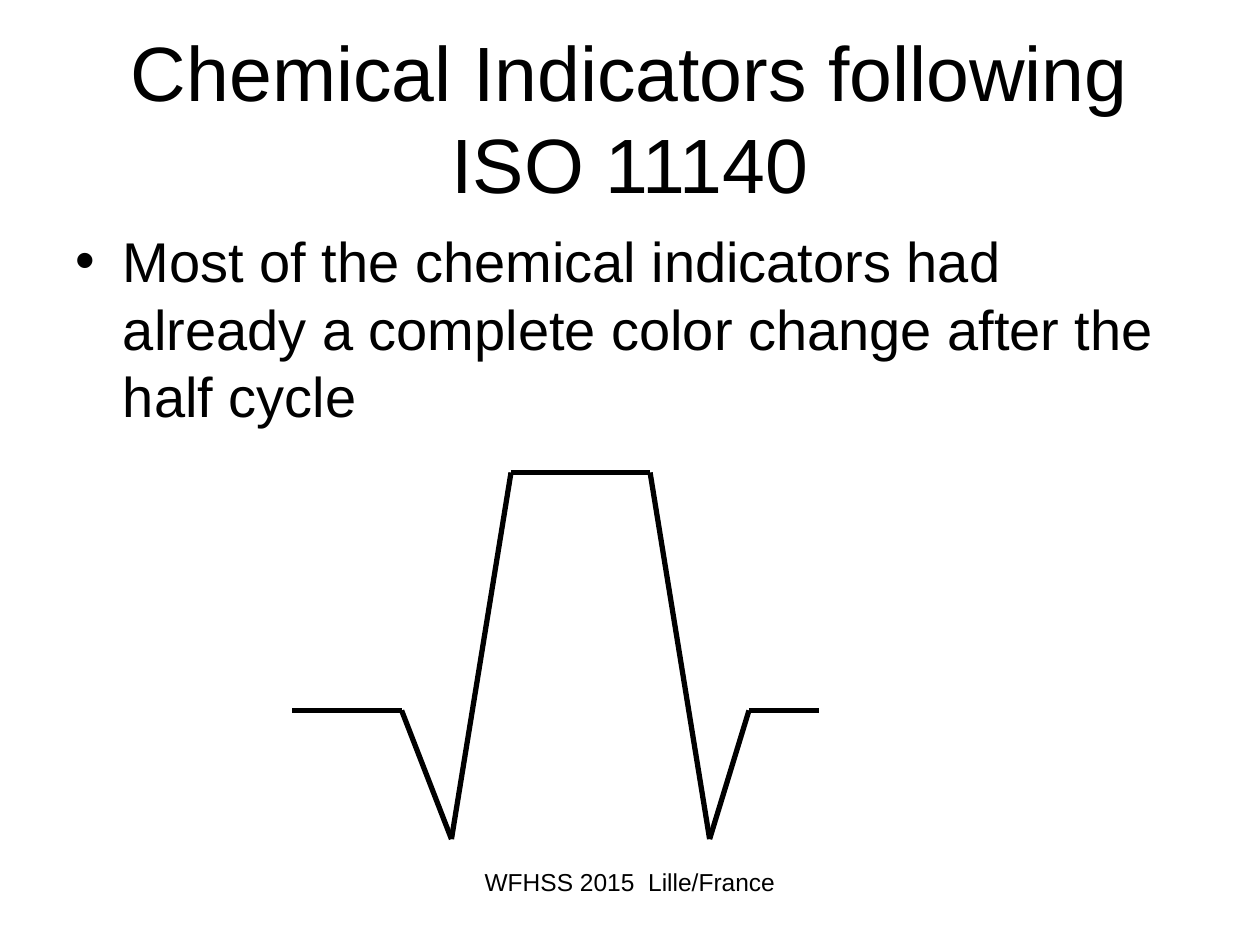
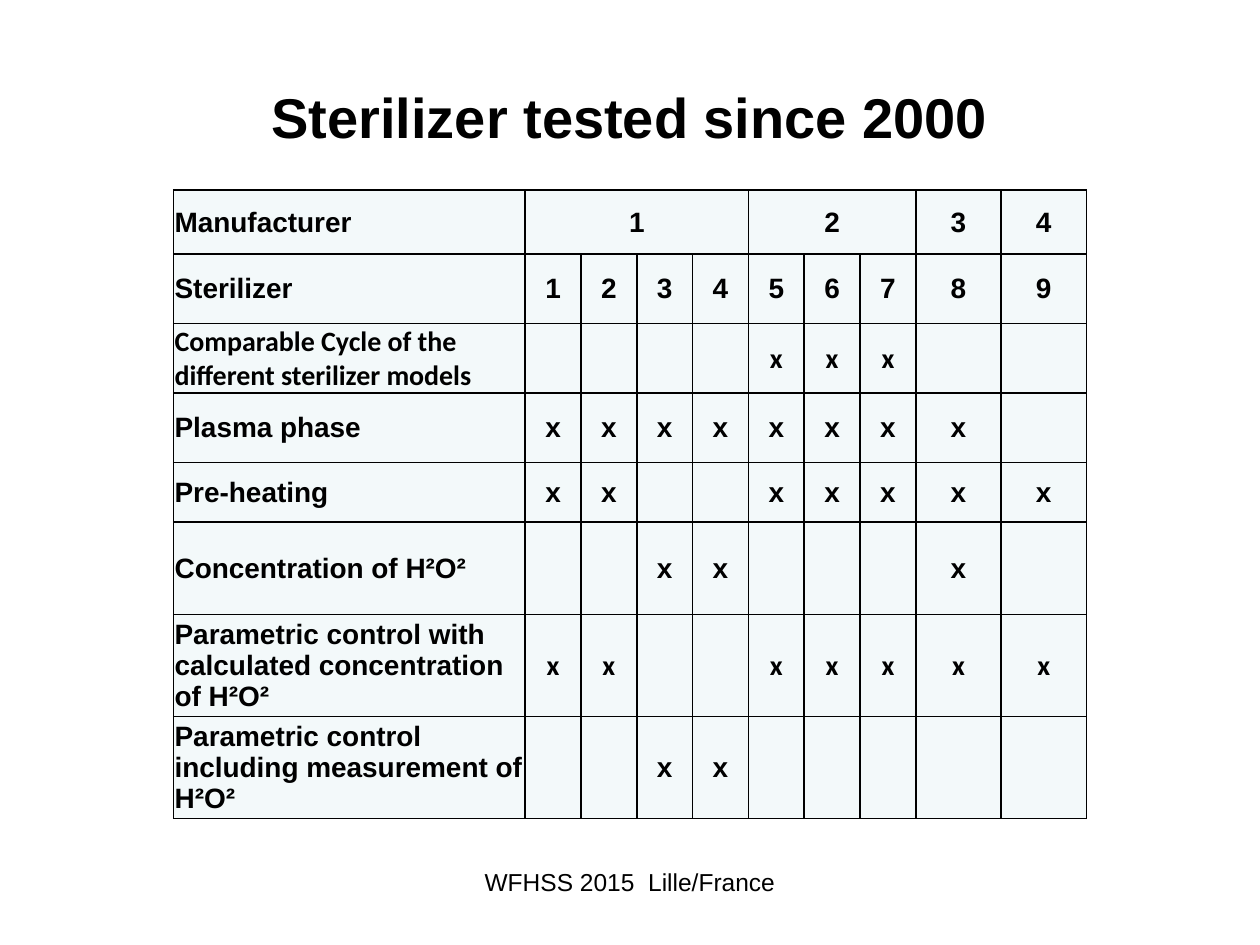
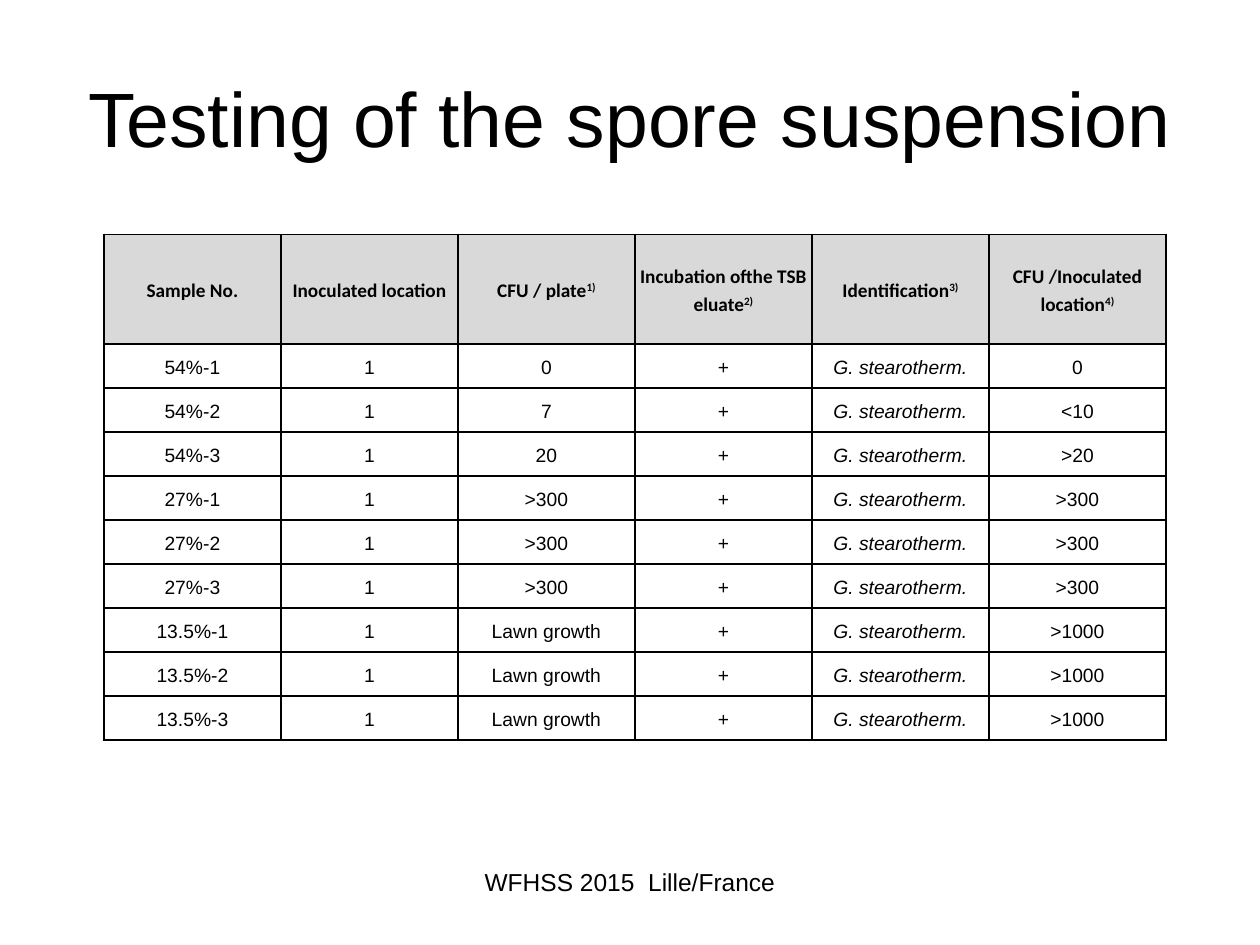
"""Builds three slides on chemical indicators, tested sterilizers and spore suspension testing."""
from itertools import pairwise

from lxml import etree
from pptx import Presentation
from pptx.dml.color import RGBColor
from pptx.enum.shapes import MSO_CONNECTOR
from pptx.enum.text import MSO_ANCHOR, MSO_AUTO_SIZE, PP_ALIGN
from pptx.oxml.ns import qn
from pptx.util import Pt

BLACK = RGBColor(0x00, 0x00, 0x00)
PALE_BLUE = RGBColor(0xF3, 0xF9, 0xFA)
HEADER_GREY = RGBColor(0xD9, 0xD9, 0xD9)
CENTER, LEFT = PP_ALIGN.CENTER, PP_ALIGN.LEFT
MIDDLE = MSO_ANCHOR.MIDDLE
NO_AUTOFIT = MSO_AUTO_SIZE.NONE
STRAIGHT = MSO_CONNECTOR.STRAIGHT
HEADING_FONT, TABLE_FONT = "Arial", "Calibri"
FOOTER = "WFHSS 2015  Lille/France"


def write(frame, text, size, font=HEADING_FONT, bold=False, italic=False,
          align=None, superscript="", line_spacing=None, space_after=None):
    paragraph = frame.paragraphs[0]
    paragraph.alignment = align
    paragraph.line_spacing = line_spacing
    paragraph.space_after = space_after
    for part in filter(None, (text, superscript)):
        run = paragraph.add_run()
        run.text = part
        run.font.size = Pt(size)
        run.font.name = font
        run.font.bold = bold
        run.font.italic = italic
        run.font.color.rgb = BLACK
    if superscript:
        run.font._element.set("baseline", "30000")


def add_grid(slide, left, top, widths, heights, inset, fills):
    grid = slide.shapes.add_table(len(heights), len(widths), Pt(left), Pt(top),
                                  Pt(sum(widths)), Pt(sum(heights))).table
    grid.first_row = grid.horz_banding = False
    for column, width in zip(grid.columns, widths):
        column.width = Pt(width)
    for row, height, fill in zip(grid.rows, heights, fills):
        row.height = Pt(height)
        for cell in row.cells:
            cell.vertical_anchor = MIDDLE
            cell.margin_left = cell.margin_right = cell.margin_top = Pt(inset)
            cell.margin_bottom = 0
            for side in ("a:lnL", "a:lnR", "a:lnT", "a:lnB"):
                border = etree.SubElement(cell._tc.get_or_add_tcPr(), qn(side), w=str(Pt(1)))
                paint = etree.SubElement(border, qn("a:solidFill"))
                etree.SubElement(paint, qn("a:srgbClr"), val=str(BLACK))
            if fill is None:
                cell.fill.background()
            else:
                cell.fill.solid()
                cell.fill.fore_color.rgb = fill
    return grid


deck = Presentation()
deck.slide_width, deck.slide_height = Pt(720), Pt(540)
TITLE_AND_CONTENT, TITLE_ONLY = deck.slide_layouts[1], deck.slide_layouts[5]

slides = []
for layout, heading, size, bold in (
    (TITLE_AND_CONTENT, "Chemical Indicators following ISO 11140", 44, False),
    (TITLE_ONLY, "Sterilizer tested since 2000", 32, True),
    (TITLE_ONLY, "Testing of the spore suspension", 44, False),
):
    slide = deck.slides.add_slide(layout)
    title = slide.shapes.title
    title.left, title.top, title.width, title.height = Pt(36), Pt(21.6), Pt(648), Pt(90)
    title.text_frame.auto_size = NO_AUTOFIT
    title.text_frame.vertical_anchor = MIDDLE
    write(title.text_frame, heading, size, bold=bold, align=CENTER)
    footer = slide.shapes.add_textbox(Pt(246), Pt(492), Pt(228), Pt(37.5))
    footer.text_frame.word_wrap = True
    write(footer.text_frame, FOOTER, 14, align=CENTER)
    slides.append(slide)
indicator_slide, sterilizer_slide, spore_slide = slides

finding = indicator_slide.placeholders[1]
finding.left, finding.top, finding.width, finding.height = Pt(36), Pt(126), Pt(648), Pt(356.4)
finding.text_frame.auto_size = NO_AUTOFIT
write(finding.text_frame, "Most of the chemical indicators had already a complete color change "
      "after the half cycle", 32)

BASELINE, VACUUM, PLATEAU = 406, 479.5, 270
cycle_points = [(167, BASELINE), (229.5, BASELINE), (258, VACUUM), (292, PLATEAU),
                (371.5, PLATEAU), (405.5, VACUUM), (428, BASELINE), (468, BASELINE)]
cycle_curve = indicator_slide.shapes.add_group_shape()
for (x1, y1), (x2, y2) in pairwise(cycle_points):
    segment = cycle_curve.shapes.add_connector(STRAIGHT, Pt(x1), Pt(y1), Pt(x2), Pt(y2))
    segment.line.color.rgb = BLACK
    segment.line.width = Pt(3)
    etree.SubElement(segment._element.spPr, qn("a:effectLst"))

sterilizer_rows = [
    ("Manufacturer", "1   2  34", HEADING_FONT, HEADING_FONT),
    ("Sterilizer", "123456789", HEADING_FONT, HEADING_FONT),
    ("Comparable Cycle of the different sterilizer models", "    xxx  ", TABLE_FONT, TABLE_FONT),
    ("Plasma phase", "xxxxxxxx ", HEADING_FONT, HEADING_FONT),
    ("Pre-heating", "xx  xxxxx", HEADING_FONT, HEADING_FONT),
    ("Concentration of H²O²", "  xx   x ", HEADING_FONT, HEADING_FONT),
    ("Parametric control with calculated concentration of H²O²", "xx  xxxxx",
     HEADING_FONT, TABLE_FONT),
    ("Parametric control including measurement of H²O²", "  xx     ",
     HEADING_FONT, HEADING_FONT),
]
sterilizers = add_grid(sterilizer_slide, 99.2, 108.6, [200.9] + [31.9] * 7 + [48.7] * 2,
                       [36.6, 39.7, 39.7, 39.7, 34, 53, 53.9, 53.9], 0.6,
                       [PALE_BLUE] * len(sterilizer_rows))
for first, last in ((1, 4), (5, 7)):
    sterilizers.cell(0, first).merge(sterilizers.cell(0, last))
for row, (feature, marks, feature_font, mark_font) in enumerate(sterilizer_rows):
    write(sterilizers.cell(row, 0).text_frame, feature, 16, feature_font, bold=True, align=LEFT)
    for column, mark in enumerate(marks, start=1):
        write(sterilizers.cell(row, column).text_frame, mark.strip(), 16, mark_font,
              bold=True, align=CENTER)

spore_headers = [("Sample No.", ""), ("Inoculated location", ""), ("CFU / plate", "1)"),
                 ("Incubation ofthe TSB eluate", "2)"), ("Identification", "3)"),
                 ("CFU /Inoculated location", "4)")]
SPECIES = "G. stearotherm."
spore_counts = [
    ("54%-1", "0", "0"), ("54%-2", "7", "<10"), ("54%-3", "20", ">20"),
    ("27%-1", ">300", ">300"), ("27%-2", ">300", ">300"), ("27%-3", ">300", ">300"),
    ("13.5%-1", "Lawn growth", ">1000"), ("13.5%-2", "Lawn growth", ">1000"),
    ("13.5%-3", "Lawn growth", ">1000"),
]
spores = add_grid(spore_slide, 59.4, 134, [101.15] * len(spore_headers),
                  [62.6] + [25.15] * len(spore_counts), 0,
                  [HEADER_GREY] + [None] * len(spore_counts))
spore_format = {"size": 11, "align": CENTER, "line_spacing": 1.15, "space_after": Pt(10)}
for column, (header, note) in enumerate(spore_headers):
    write(spores.cell(0, column).text_frame, header, font=TABLE_FONT, bold=True,
          superscript=note, **spore_format)
for row, (sample, plate_count, location_count) in enumerate(spore_counts, start=1):
    values = (sample, "1", plate_count, "+", SPECIES, location_count)
    for column, value in enumerate(values):
        write(spores.cell(row, column).text_frame, value, italic=value == SPECIES, **spore_format)

deck.save("out.pptx")
